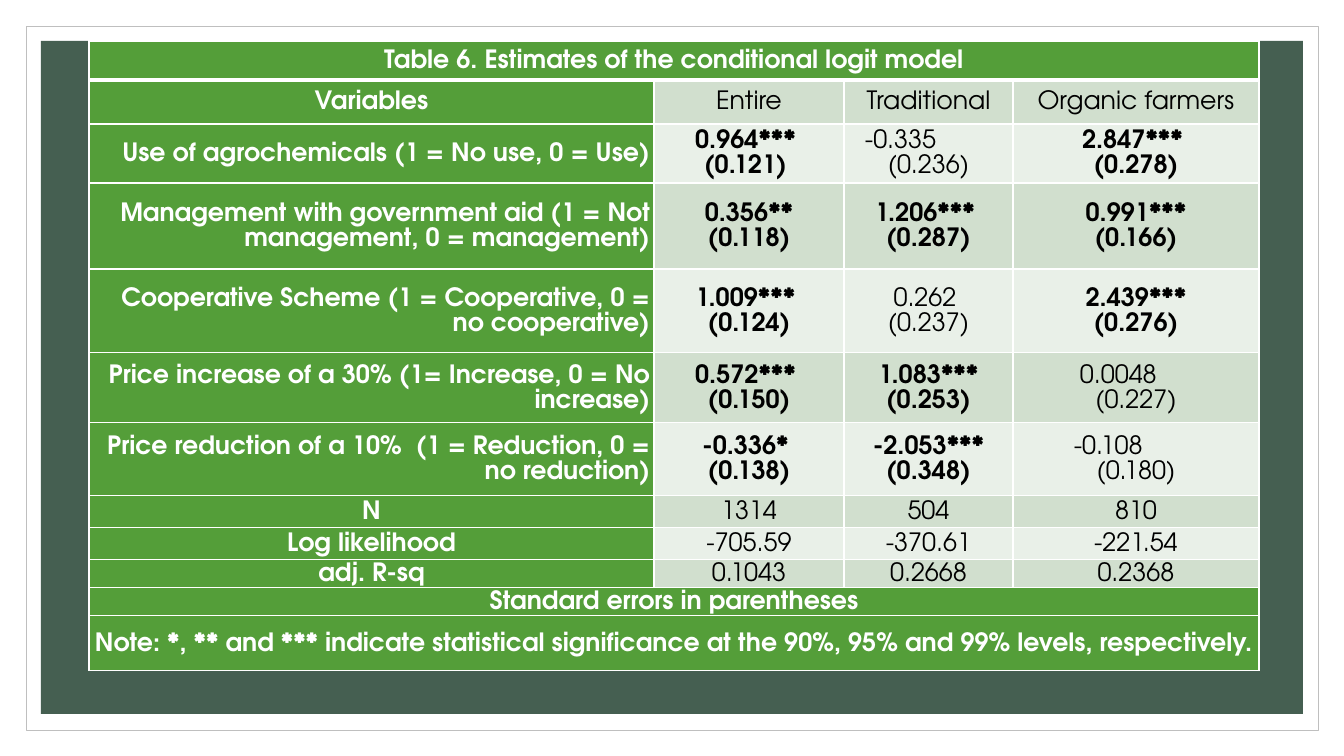
from lxml import etree
from pptx import Presentation
from pptx import util as u
from pptx.dml.color import RGBColor
from pptx.enum import shapes, text
from pptx.oxml import ns

# Content: each estimate is (coefficient, standard error)
TITLE = "Table 6. Estimates of the conditional logit model"
HEADER = ["Variables", "Entire", "Traditional", "Organic farmers"]
ESTIMATES = [
    ["Use of agrochemicals (1 = No use, 0 = Use)",
     ("0.964*** ", "(0.121) "), ("-0.335", "(0.236)"), ("2.847*** ", "(0.278)")],
    ["Management with government aid (1 = Not management, 0 = management)",
     (" 0.356** ", "(0.118)"), ("1.206*** ", "(0.287)"), ("0.991***", "(0.166)")],
    ["Cooperative Scheme (1 = Cooperative, 0 = no cooperative)",
     ("1.009*** ", "(0.124)"), ("0.262 ", "(0.237)"), ("2.439***", "(0.276)")],
    ["Price increase of a 30% (1= Increase, 0 = No increase)",
     ("0.572*** ", "(0.150)"), ("1.083***", "(0.253)"), ("0.0048", "(0.227)")],
    ["Price reduction of a 10%  (1 = Reduction, 0 = no reduction)",
     ("-0.336* ", "(0.138)"), ("-2.053***", "(0.348)"), ("-0.108", "(0.180)")],
]
STATISTICS = [
    ["N", "1314", "504", "810"],
    ["Log likelihood", "-705.59", "-370.61", "-221.54"],
    ["adj. R-sq", "0.1043", "0.2668", "0.2368"],
]
FOOTERS = [
    "Standard errors in parentheses",
    "Note: *, ** and *** indicate statistical signiﬁcance at the 90%, 95% and 99% levels, respectively.",
]
# Coefficients set left of centre, with their indent in px
INDENTS = {"-0.335": 17, "0.0048": 63, "-0.108": 57}

COLORS = {"white": "FFFFFF", "black": "000000", "frame": "BFBFBF", "panel": "455F51",
          "green": "549E39", "dark band": "D1DFCE", "light band": "E9F0E8"}
FONT = "TeX Gyre Adventor"
COLUMN_WIDTHS = [565, 190, 169, 246]
ROW_HEIGHTS = [39, 44, 59, 86, 84, 70, 73, 32, 32, 28, 28, 55]
TABLE_LEFT, TABLE_TOP = 89, 41
ALIGN = text.PP_ALIGN


def px(length):
    return u.Emu(round(length * 914400 / 100.8))


def color(name):
    return RGBColor.from_string(COLORS[name])


def add_panel(slide, left, top, width, height, fill, line=None):
    shape = slide.shapes.add_shape(shapes.MSO_SHAPE.RECTANGLE,
                                   px(left), px(top), px(width), px(height))
    shape.shadow.inherit = False
    shape.fill.solid()
    shape.fill.fore_color.rgb = color(fill)
    if line:
        shape.line.color.rgb = color(line)
        shape.line.width = u.Pt(0.5)
    else:
        shape.line.fill.background()


def set_borders(cell, top=1, bottom=1):
    properties = cell._tc.get_or_add_tcPr()
    widths = {"a:lnL": 1, "a:lnR": 1, "a:lnT": top, "a:lnB": bottom}
    for position, (tag, width) in enumerate(widths.items()):
        line = etree.Element(ns.qn(tag), w=str(u.Pt(width)))
        fill = etree.SubElement(line, ns.qn("a:solidFill"))
        etree.SubElement(fill, ns.qn("a:srgbClr"), val=COLORS["white"])
        properties.insert(position, line)


def write(cell, lines, fill, ink="white", bold=True, align=ALIGN.CENTER):
    cell.fill.solid()
    cell.fill.fore_color.rgb = color(fill)
    cell.vertical_anchor = text.MSO_ANCHOR.MIDDLE
    cell.margin_left = cell.margin_right = px(4)
    cell.margin_top = cell.margin_bottom = 0
    frame = cell.text_frame
    for index, line in enumerate(lines):
        paragraph = frame.add_paragraph() if index else frame.paragraphs[0]
        paragraph.alignment = align
        paragraph.line_spacing = 1.07
        if line in INDENTS:
            paragraph.alignment = ALIGN.LEFT
            paragraph._p.get_or_add_pPr().set("marL", str(px(INDENTS[line])))
        run = paragraph.add_run()
        run.text = line
        run.font.name = FONT
        run.font.size = u.Pt(18)
        run.font.bold = bold
        run.font.color.rgb = color(ink)


def add_estimates_table(slide):
    rows = [[TITLE], HEADER, *ESTIMATES, *STATISTICS, *([footer] for footer in FOOTERS)]
    table = slide.shapes.add_table(
        len(rows), len(HEADER), px(TABLE_LEFT), px(TABLE_TOP),
        px(sum(COLUMN_WIDTHS)), px(sum(ROW_HEIGHTS))).table
    table.first_row = table.horz_banding = False
    for column, width in zip(table.columns, COLUMN_WIDTHS):
        column.width = px(width)

    for r, values in enumerate(rows):
        table.rows[r].height = px(ROW_HEIGHTS[r])
        # A heavy rule separates the title from the rest
        for cell in table.rows[r].cells:
            set_borders(cell, top=3 if r == 1 else 1, bottom=3 if r == 0 else 1)
        if len(values) == 1:
            table.cell(r, 0).merge(table.cell(r, len(HEADER) - 1))
        align = ALIGN.RIGHT if values in ESTIMATES else ALIGN.CENTER
        write(table.cell(r, 0), [values[0]], "green", align=align)
        # Significant estimates carry stars and are bold
        band = "dark band" if r % 2 else "light band"
        for c, value in enumerate(values[1:], 1):
            lines = [value] if isinstance(value, str) else value
            write(table.cell(r, c), lines, band, ink="black", bold="*" in lines[0])


def main():
    presentation = Presentation()
    presentation.slide_width, presentation.slide_height = px(1344), px(756)
    slide = presentation.slides.add_slide(presentation.slide_layouts[6])
    # Framed background
    add_panel(slide, 26, 26, 1292, 704, "white", line="frame")
    add_panel(slide, 41, 41, 1262, 673, "panel")
    add_estimates_table(slide)
    presentation.save("out.pptx")


if __name__ == "__main__":
    main()
